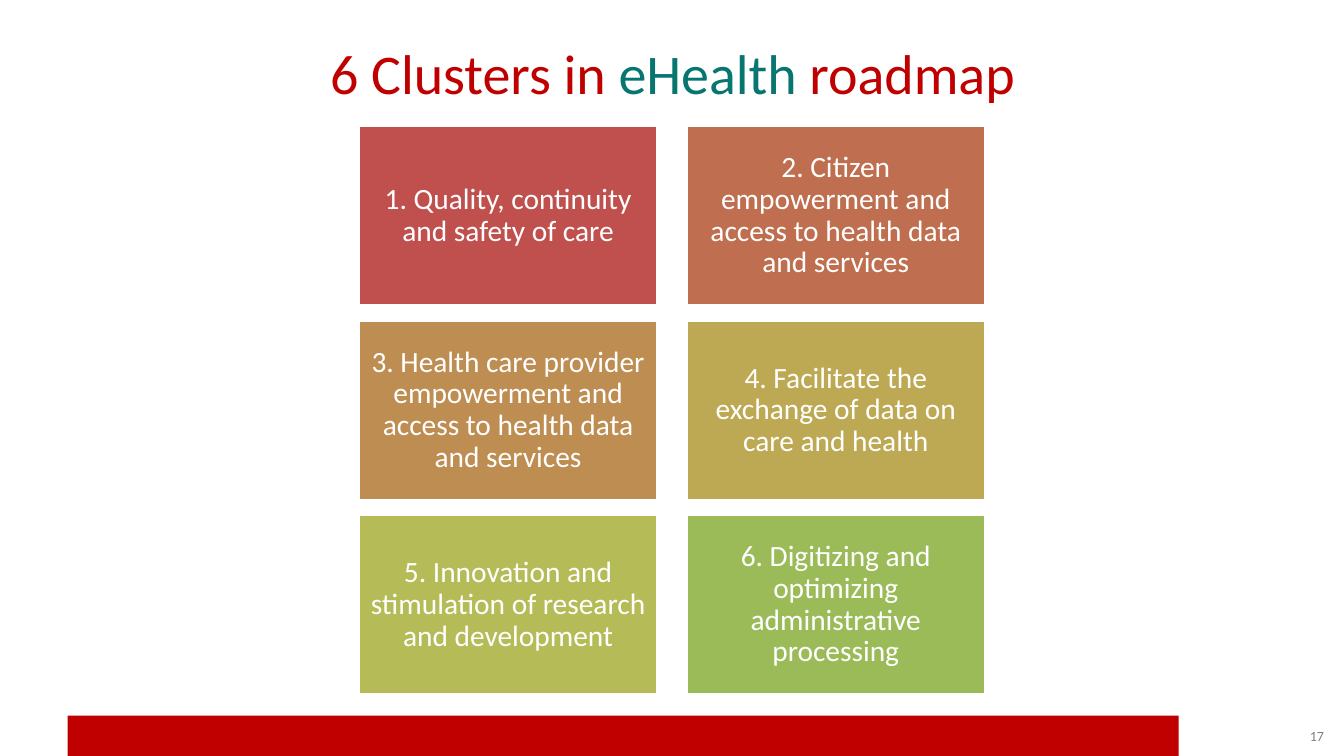
from dataclasses import dataclass

from pptx import Presentation
from pptx import util as u
from pptx.dml.color import RGBColor
from pptx.enum import shapes, text


@dataclass(frozen=True)
class Theme:
    font: str = "Calibri"
    red: str = "C00000"
    teal: str = "087670"
    white: str = "FFFFFF"
    grey: str = "808080"
    clusters: tuple = ("C0504D", "BF6F4F", "BE8D52", "BDA954", "B5BC57", "9BBB59")
    title_size: int = 40
    cluster_size: int = 21
    number_size: int = 10


THEME = Theme()

CLUSTERS = (
    "1. Quality, continuity and safety of care",
    "2. Citizen empowerment and access to health data and services",
    "3. Health care provider empowerment and access to health data and services",
    "4. Facilitate the exchange of data on care and health",
    "5. Innovation and stimulation of research and development",
    "6. Digitizing and optimizing administrative processing",
)
COLUMNS = 2
GRID_LEFT, GRID_TOP = 3.56, 1.25
COLUMN_STEP, ROW_STEP = 3.25, 1.93
CLUSTER_WIDTH, CLUSTER_HEIGHT = 2.96, 1.78


def write(frame, *parts, size, align=text.PP_ALIGN.CENTER, spacing=1.0,
          side_inset=0.1, end_inset=0.05):
    """Fill a text frame with one paragraph of (wording, colour) parts."""
    frame.word_wrap = True
    frame.auto_size = text.MSO_AUTO_SIZE.NONE
    frame.vertical_anchor = text.MSO_ANCHOR.MIDDLE
    frame.margin_left = frame.margin_right = u.Inches(side_inset)
    frame.margin_top = frame.margin_bottom = u.Inches(end_inset)
    paragraph = frame.paragraphs[0]
    paragraph.alignment = align
    paragraph.line_spacing = spacing
    for wording, colour in parts:
        run = paragraph.add_run()
        run.text = wording
        run.font.name = THEME.font
        run.font.size = u.Pt(size)
        run.font.color.rgb = RGBColor.from_string(colour)


def add_block(slide, left, top, width, height, fill, outline=None):
    block = slide.shapes.add_shape(
        shapes.MSO_SHAPE.RECTANGLE,
        u.Inches(left), u.Inches(top), u.Inches(width), u.Inches(height))
    block.shadow.inherit = False
    block.fill.solid()
    block.fill.fore_color.rgb = RGBColor.from_string(fill)
    if outline:
        block.line.color.rgb = RGBColor.from_string(outline)
        block.line.width = u.Pt(2)
    else:
        block.line.fill.background()
    return block


def set_title(slide, *parts):
    title = slide.shapes.title
    title.left, title.top = u.Inches(0.67), u.Inches(0.21)
    title.width, title.height = u.Inches(12), u.Inches(1.02)
    write(title.text_frame, *parts, size=THEME.title_size)


def add_clusters(slide):
    for index, (wording, fill) in enumerate(zip(CLUSTERS, THEME.clusters)):
        row, column = divmod(index, COLUMNS)
        cluster = add_block(
            slide, GRID_LEFT + column * COLUMN_STEP, GRID_TOP + row * ROW_STEP,
            CLUSTER_WIDTH, CLUSTER_HEIGHT, fill, outline=THEME.white)
        write(cluster.text_frame, (wording, THEME.white), size=THEME.cluster_size,
              spacing=0.9, side_inset=0.09, end_inset=0.09)


def add_page_number(slide, number):
    box = slide.shapes.add_textbox(
        u.Inches(12.17), u.Inches(7.1), u.Inches(1.06), u.Inches(0.4))
    write(box.text_frame, (number, THEME.grey), size=THEME.number_size,
          align=text.PP_ALIGN.RIGHT)


def main():
    deck = Presentation()
    deck.slide_width, deck.slide_height = u.Inches(13.33), u.Inches(7.5)
    slide = deck.slides.add_slide(deck.slide_layouts.get_by_name("Title Only"))
    add_block(slide, 0.67, 7.1, 11.02, 0.4, THEME.red)
    set_title(slide, ("6 Clusters in ", THEME.red), ("eHealth", THEME.teal),
              (" roadmap", THEME.red))
    add_page_number(slide, "17")
    add_clusters(slide)
    deck.save("out.pptx")


if __name__ == "__main__":
    main()
